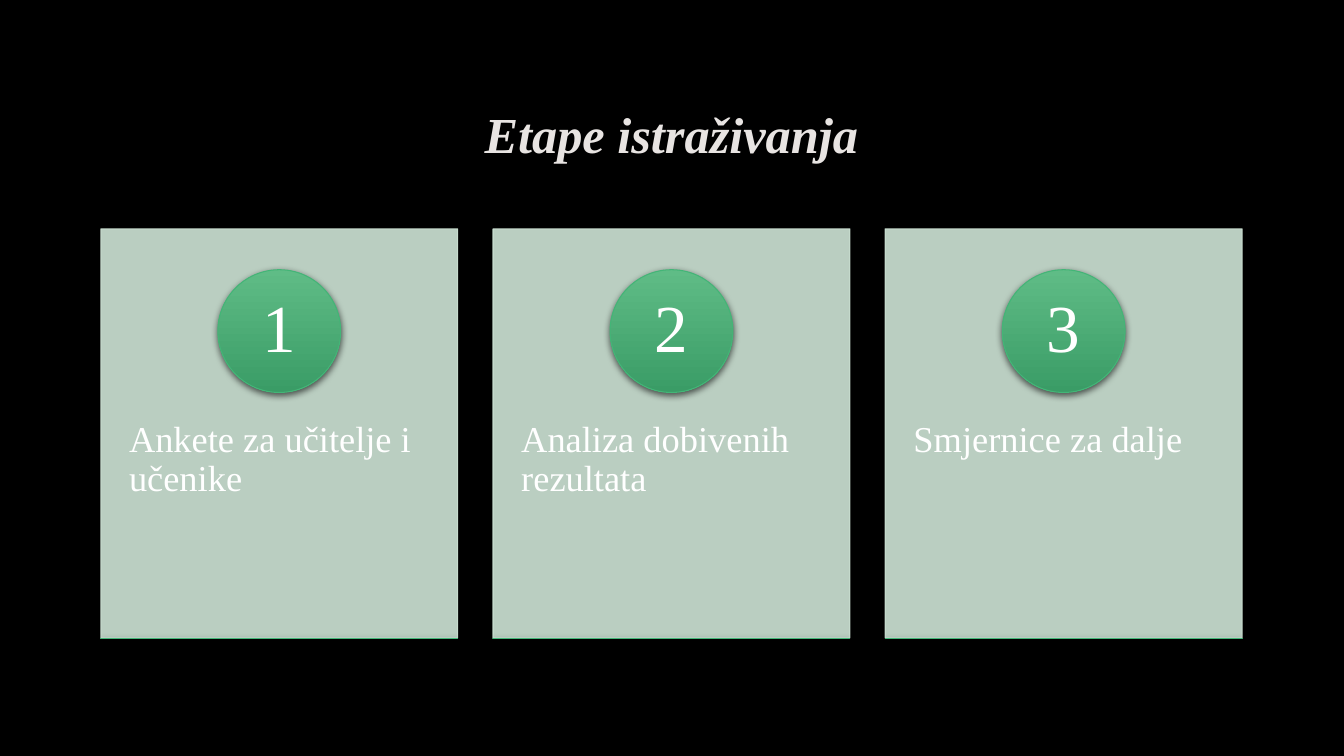
import pptx
import pptx.dml.color
import pptx.enum.shapes
import pptx.enum.text
import pptx.oxml
import pptx.oxml.ns
import pptx.util
from pptx.util import Inches

FONT = "Times New Roman"
NS = pptx.oxml.ns.nsdecls("a")
SHAPE = pptx.enum.shapes.MSO_SHAPE
ALIGN = pptx.enum.text.PP_ALIGN
ANCHOR = pptx.enum.text.MSO_ANCHOR
STAGES = ["Ankete za učitelje i učenike", "Analiza dobivenih rezultata", "Smjernice za dalje"]


def color(value):
    return pptx.dml.color.RGBColor.from_string(value)


def set_alpha(fill, percent):
    rgb = fill._xPr.find(".//" + pptx.oxml.ns.qn("a:srgbClr"))
    rgb.append(pptx.oxml.parse_xml(f'<a:alpha {NS} val="{percent * 1000}"/>'))


def write(frame, wording, size, ink, align, anchor, insets):
    frame.word_wrap = True
    frame.auto_size = pptx.enum.text.MSO_AUTO_SIZE.NONE
    frame.vertical_anchor = anchor
    across, down = insets
    frame.margin_left = frame.margin_right = Inches(across)
    frame.margin_top = frame.margin_bottom = Inches(down)
    paragraph = frame.paragraphs[0]
    paragraph.alignment = align
    paragraph.line_spacing = 0.9
    run = paragraph.add_run()
    run.text = wording
    run.font.name = FONT
    run.font.size = pptx.util.Pt(size)
    run.font.color.rgb = color(ink)
    return run


def add_accent(slide, preset, left, top, width, height):
    accent = slide.shapes.add_shape(
        preset, Inches(left), Inches(top), Inches(width), Inches(height))
    accent.fill.gradient()
    accent.fill.gradient_angle = 270
    for stop, shade in zip(accent.fill.gradient_stops, ("5FBC86", "3A9C66")):
        stop.color.rgb = color(shade)
    accent.line.color.rgb = color("43B577")
    accent.line.width = pptx.util.Pt(0.75)
    accent.shadow.inherit = False
    effects = accent._element.spPr.find(pptx.oxml.ns.qn("a:effectLst"))
    effects.append(pptx.oxml.parse_xml(
        f'<a:outerShdw {NS} blurRad="63500" dist="25400" dir="5400000" rotWithShape="0">'
        '<a:srgbClr val="000000"><a:alpha val="60000"/></a:srgbClr></a:outerShdw>'))
    return accent


def add_title(slide, left, top, width, height):
    title = slide.shapes.title
    title.left, title.top = Inches(left), Inches(top)
    title.width, title.height = Inches(width), Inches(height)
    heading = write(title.text_frame, "Etape istraživanja", 36, "E8E4E2",
                    ALIGN.CENTER, ANCHOR.MIDDLE, (0.1, 0.05))
    heading.font.bold = True
    heading.font.italic = True
    heading.font._element.insert(0, pptx.oxml.parse_xml(
        f'<a:ln {NS} w="9525"><a:solidFill><a:srgbClr val="404040">'
        '<a:alpha val="10000"/></a:srgbClr></a:solidFill></a:ln>'))


def add_stage(slide, number, wording, left, top, width, height):
    card = slide.shapes.add_shape(
        SHAPE.RECTANGLE, Inches(left), Inches(top), Inches(width), Inches(height))
    card.shadow.inherit = False
    card.line.width = pptx.util.Pt(0.75)
    for fill in (card.fill, card.line.fill):
        fill.solid()
        fill.fore_color.rgb = color("CFE5D6")
        set_alpha(fill, 90)

    description = slide.shapes.add_textbox(
        Inches(left), Inches(top + 0.38 * height), Inches(width), Inches(0.6 * height))
    write(description.text_frame, wording, 26, "FFFFFF",
          ALIGN.LEFT, ANCHOR.TOP, (0.28, 0.36))

    diameter = 0.3 * height
    badge = add_accent(slide, SHAPE.OVAL, left + (width - diameter) / 2,
                       top + 0.1 * height, diameter, diameter)
    write(badge.text_frame, str(number), 48, "FFFFFF",
          ALIGN.CENTER, ANCHOR.MIDDLE, (0.1, 0.01))

    add_accent(slide, SHAPE.RECTANGLE, left, top + height, width, 0)


def add_stages(slide, left, top, width, height):
    gap = 0.35
    card_width = (width - gap * (len(STAGES) - 1)) / len(STAGES)
    for index, wording in enumerate(STAGES):
        add_stage(slide, index + 1, wording, left + index * (card_width + gap),
                  top, card_width, height)


def main():
    deck = pptx.Presentation()
    deck.slide_width, deck.slide_height = Inches(13.33), Inches(7.5)
    slide = deck.slides.add_slide(deck.slide_layouts[5])
    slide.background.fill.solid()
    slide.background.fill.fore_color.rgb = color("000000")
    add_title(slide, 1, 0.67, 11.32, 1.38)
    add_stages(slide, 1, 2.27, 11.32, 4.06)
    deck.save("out.pptx")


if __name__ == "__main__":
    main()
